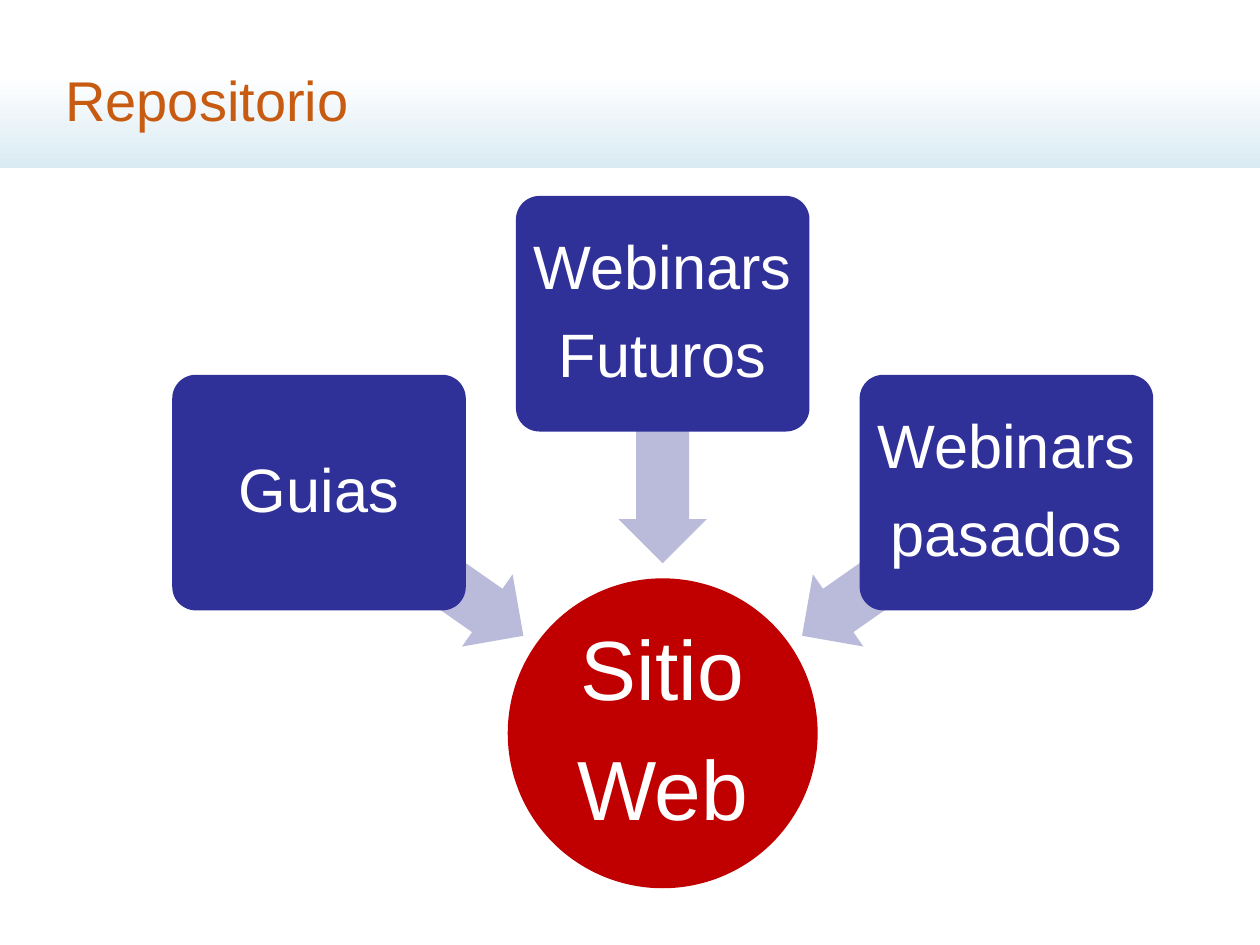
"""Build the Repositorio slide: three sources feeding one web site."""
from math import cos, radians, sin

from pptx import Presentation
from pptx.dml.color import RGBColor
from pptx.enum.shapes import MSO_SHAPE
from pptx.enum.text import MSO_ANCHOR, PP_ALIGN
from pptx.util import Inches, Pt

RECT, OVAL = MSO_SHAPE.RECTANGLE, MSO_SHAPE.OVAL
ROUND, ARROW = MSO_SHAPE.ROUNDED_RECTANGLE, MSO_SHAPE.LEFT_ARROW
MIDDLE = MSO_ANCHOR.MIDDLE
LEFT, CENTER = PP_ALIGN.LEFT, PP_ALIGN.CENTER

TITLE = "Repositorio"
HUB = ["Sitio", "Web"]
NODES = [
    (215, ["Guias"]),
    (270, ["Webinars", "Futuros"]),
    (325, ["Webinars", "pasados"]),
]
THEME = {
    "font": "Arial", "title": "C75B12", "text": "FFFFFF", "hub": "C00000",
    "node": "303099", "arrow": "BABADB", "fade": ("FFFFFF", "DAEBF3"),
    "title_pt": 32, "hub_pt": 48, "node_pt": 35,
}
WIDE, HIGH = 10, 7.5
MID = (5.26, 5.82)
HUB_SIZE, NODE_SIZE, ARROW_SIZE = (2.46, 2.46), (2.33, 1.87), (1.98, 0.7)
NODE_RAD, ARROW_RAD = 3.33, 2.34


def tint(name):
    return RGBColor.from_string(name)


def orbit(angle, rad):
    turn = radians(angle)
    return MID[0] + rad * cos(turn), MID[1] + rad * sin(turn)


def draw(slide, kind, mid, size, color=None):
    (x, y), (w, h) = mid, size
    shape = slide.shapes.add_shape(
        kind, Inches(x - w / 2), Inches(y - h / 2), Inches(w), Inches(h))
    shape.shadow.inherit = False
    shape.line.fill.background()
    if color:
        shape.fill.solid()
        shape.fill.fore_color.rgb = tint(color)
    return shape


def write(shape, lines, size, color, inset, align=CENTER, gap=0):
    frame = shape.text_frame
    frame.word_wrap = True
    frame.vertical_anchor = MIDDLE
    frame.margin_left = frame.margin_right = Inches(inset[0])
    frame.margin_top = frame.margin_bottom = Inches(inset[1])
    for i, line in enumerate(lines):
        para = frame.add_paragraph() if i else frame.paragraphs[0]
        para.alignment = align
        if gap:
            para.line_spacing = 0.9
            para.space_before = Pt(gap if i else 0)
            para.space_after = Pt(gap if i == len(lines) - 1 else 0)
        run = para.add_run()
        run.text = line
        run.font.name = THEME["font"]
        run.font.size = Pt(size)
        run.font.color.rgb = tint(color)


def main():
    deck = Presentation()
    deck.slide_width, deck.slide_height = Inches(WIDE), Inches(HIGH)
    slide = deck.slides.add_slide(deck.slide_layouts[6])

    band = draw(slide, RECT, (WIDE / 2, 0.96), (WIDE, 0.75))
    band.fill.gradient()
    band.fill.gradient_angle = 270
    for stop, color, place in zip(band.fill.gradient_stops, THEME["fade"], (0, 1)):
        stop.color.rgb = tint(color)
        stop.position = place

    head = slide.shapes.add_textbox(
        Inches(0.42), Inches(0.25), Inches(9.17), Inches(1.08))
    write(head, [TITLE], THEME["title_pt"], THEME["title"], (0.1, 0.05), LEFT)

    hub = draw(slide, OVAL, MID, HUB_SIZE, THEME["hub"])
    write(hub, HUB, THEME["hub_pt"], THEME["text"], (0.03, 0.03), gap=16.8)

    for angle, lines in NODES:
        arrow = draw(slide, ARROW, orbit(angle, ARROW_RAD), ARROW_SIZE, THEME["arrow"])
        arrow.adjustments[0] = 0.6
        arrow.adjustments[1] = 0.5
        arrow.rotation = angle
        node = draw(slide, ROUND, orbit(angle, NODE_RAD), NODE_SIZE, THEME["node"])
        node.adjustments[0] = 0.1
        write(node, lines, THEME["node_pt"], THEME["text"], (0.07, 0.07), gap=12.2)

    deck.save("out.pptx")


if __name__ == "__main__":
    main()
